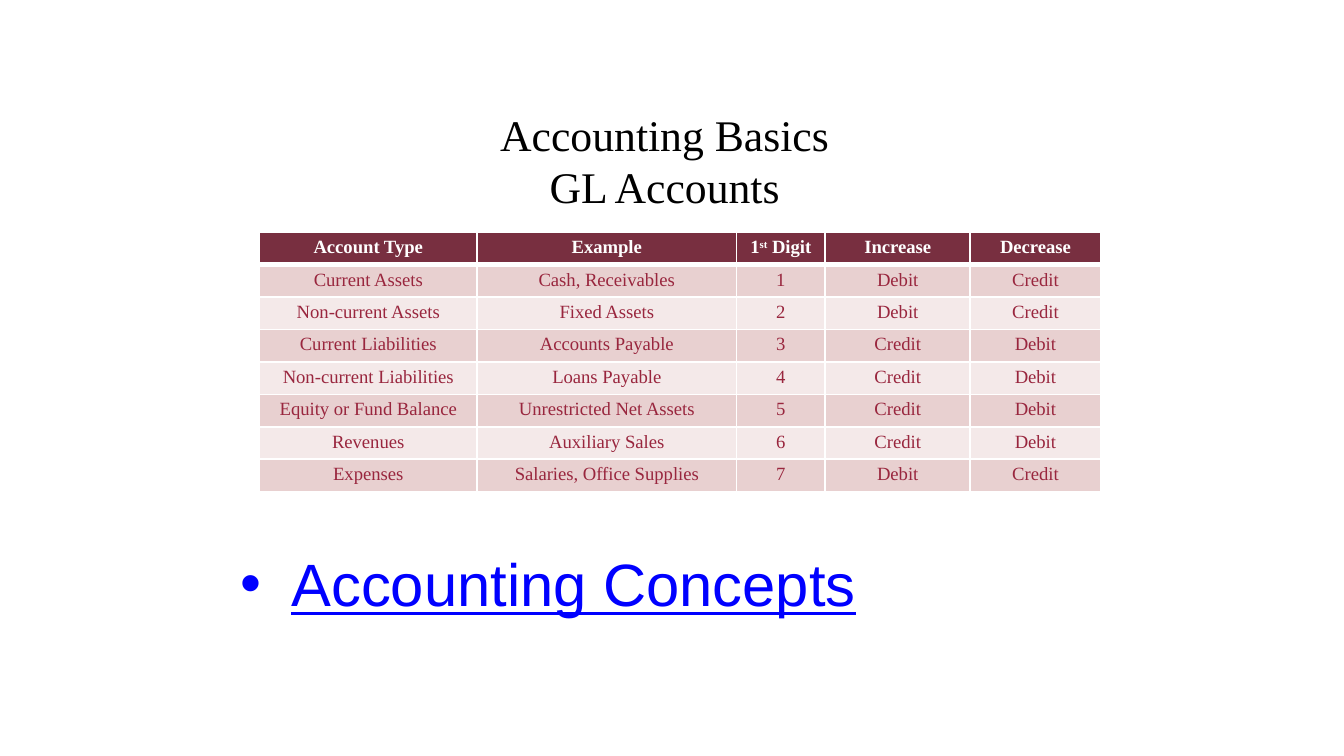
from lxml import etree
from pptx import Presentation
from pptx.dml.color import RGBColor
from pptx.enum.text import MSO_ANCHOR, PP_ALIGN
from pptx.oxml.ns import qn
from pptx.util import Inches, Pt

SERIF = "Times New Roman"
SANS = "Arial"
WHITE, BLACK, LINK_BLUE = "FFFFFF", "000000", "0000FF"
GARNET, GARNET_TEXT = "782F40", "99263E"
BANDS = ("E8D0D0", "F4E9E9")

SLIDE_WIDTH = 10
COLUMN_WIDTHS = (1.62, 1.93, 0.66, 1.08, 0.97)
TABLE_HEIGHT = 1.93
HEADERS = ("Account Type", "Example", ("1", "st", " Digit"), "Increase", "Decrease")
ACCOUNTS = (
    ("Current Assets", "Cash, Receivables", "Debit"),
    ("Non-current Assets", "Fixed Assets", "Debit"),
    ("Current Liabilities", "Accounts Payable", "Credit"),
    ("Non-current Liabilities", "Loans Payable", "Credit"),
    ("Equity or Fund Balance", "Unrestricted Net Assets", "Credit"),
    ("Revenues", "Auxiliary Sales", "Credit"),
    ("Expenses", "Salaries, Office Supplies", "Debit"),
)


def rgb(color):
    return RGBColor.from_string(color)


def add_run(paragraph, text, font_name, size, color, bold=False, underline=False):
    run = paragraph.add_run()
    run.text = text
    font = run.font
    font.name, font.size = font_name, Pt(size)
    font.bold, font.underline = bold, underline
    font.color.rgb = rgb(color)
    return run


def add_text_frame(slide, left, top, width, height, anchor):
    box = slide.shapes.add_textbox(Inches(left), Inches(top), Inches(width), Inches(height))
    frame = box.text_frame
    frame.word_wrap = True
    frame.vertical_anchor = anchor
    return frame


def add_title(slide, lines):
    frame = add_text_frame(slide, 2.31, 0.77, 5.27, 0.84, MSO_ANCHOR.MIDDLE)
    paragraph = frame.paragraphs[0]
    paragraph.alignment = PP_ALIGN.CENTER
    for index, line in enumerate(lines):
        if index:
            paragraph.add_line_break()
        add_run(paragraph, line, SERIF, 23.4, BLACK)


def add_bullet(slide, text):
    frame = add_text_frame(slide, 1.69, 1.61, 6.5, 3.85, MSO_ANCHOR.TOP)
    # The body surrounds the table, so its text starts below it
    frame.margin_top = Inches(2.46)
    paragraph = frame.paragraphs[0]
    properties = paragraph._p.get_or_add_pPr()
    properties.set("marL", str(Inches(0.38)))
    properties.set("indent", str(Inches(-0.38)))
    bullet_color = etree.SubElement(properties, qn("a:buClr"))
    etree.SubElement(bullet_color, qn("a:srgbClr"), val=LINK_BLUE)
    etree.SubElement(properties, qn("a:buFont"), typeface=SANS)
    etree.SubElement(properties, qn("a:buChar"), char="•")
    add_run(paragraph, text, SANS, 32, LINK_BLUE, underline=True)


def set_borders(cell, top, bottom):
    properties = cell._tc.get_or_add_tcPr()
    for side, width in (("L", 1), ("R", 1), ("T", top), ("B", bottom)):
        line = etree.SubElement(properties, qn(f"a:ln{side}"), w=str(Pt(width)))
        fill = etree.SubElement(line, qn("a:solidFill"))
        etree.SubElement(fill, qn("a:srgbClr"), val=WHITE)


def style_cell(cell, row):
    set_borders(cell, top=3 if row == 1 else 1, bottom=3 if row == 0 else 1)
    cell.fill.solid()
    cell.fill.fore_color.rgb = rgb(BANDS[(row - 1) % 2] if row else GARNET)
    side_margin = Inches(0.07)
    cell.margin_left = cell.margin_right = side_margin
    cell.margin_top = cell.margin_bottom = side_margin // 2


def fill_cell(cell, content, is_header):
    paragraph = cell.text_frame.paragraphs[0]
    paragraph.alignment = PP_ALIGN.CENTER
    parts = (content,) if isinstance(content, str) else content
    for index, text in enumerate(parts):
        color = WHITE if is_header else GARNET_TEXT
        run = add_run(paragraph, text, SERIF, 10, color, bold=is_header)
        if index == 1:  # the ordinal ending is raised
            run._r.get_or_add_rPr().set("baseline", "30000")


def add_accounts_table(slide):
    opposite = {"Debit": "Credit", "Credit": "Debit"}
    rows = [HEADERS]
    for digit, (account, example, increase) in enumerate(ACCOUNTS, start=1):
        rows.append((account, example, str(digit), increase, opposite[increase]))

    table = slide.shapes.add_table(
        len(rows), len(HEADERS), Inches(1.93), Inches(1.73),
        Inches(sum(COLUMN_WIDTHS)), Inches(TABLE_HEIGHT),
    ).table
    for column, width in zip(table.columns, COLUMN_WIDTHS):
        column.width = Inches(width)
    for row, contents in enumerate(rows):
        table.rows[row].height = Inches(TABLE_HEIGHT / len(rows))
        for column, content in enumerate(contents):
            cell = table.cell(row, column)
            style_cell(cell, row)
            fill_cell(cell, content, is_header=row == 0)


def main():
    presentation = Presentation()
    # Widescreen, 16:9
    presentation.slide_width = Inches(SLIDE_WIDTH)
    presentation.slide_height = Inches(SLIDE_WIDTH * 9 / 16)
    slide = presentation.slides.add_slide(presentation.slide_layouts[6])

    # Heading, body link, then the table on top
    add_title(slide, ("Accounting Basics", "GL Accounts"))
    add_bullet(slide, "Accounting Concepts")
    add_accounts_table(slide)

    presentation.save("out.pptx")


if __name__ == "__main__":
    main()
